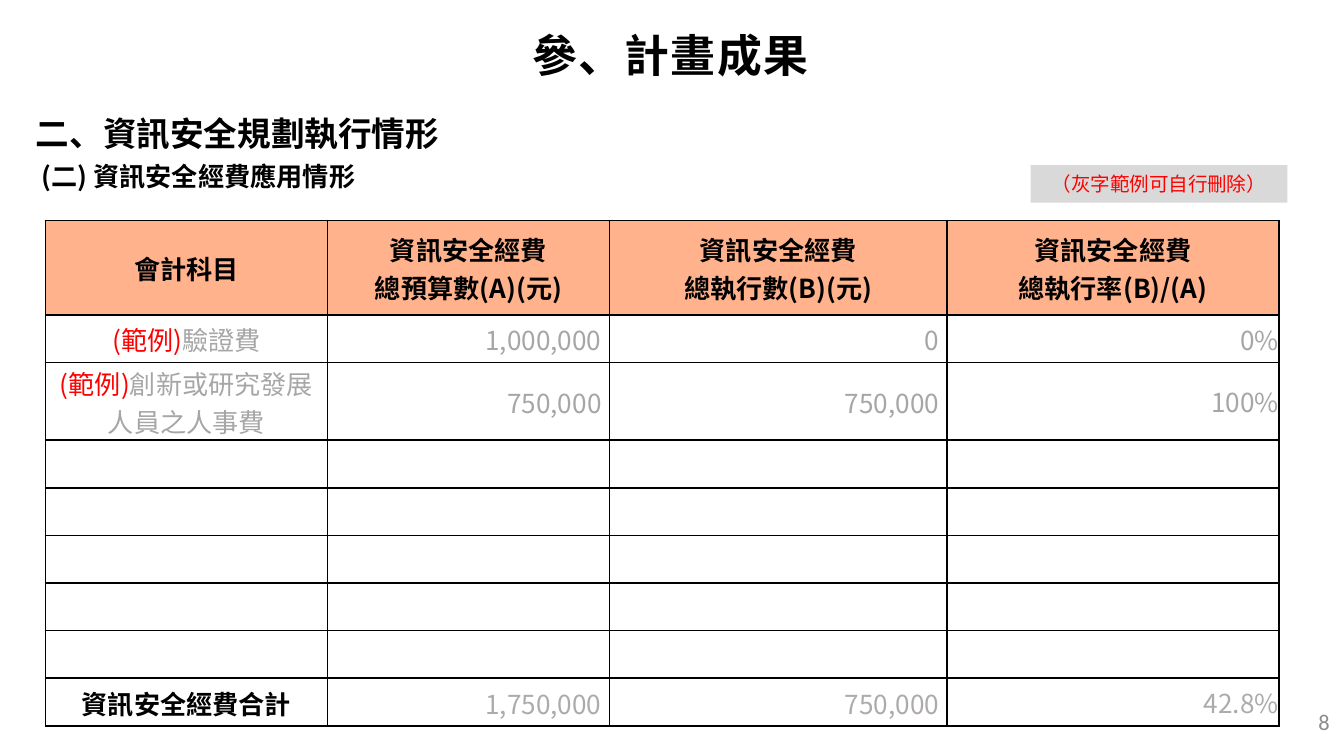
"""Build the slide reporting how the information security budget was used."""
from dataclasses import dataclass
from typing import Optional

from lxml.etree import SubElement
from pptx import Presentation
from pptx.dml.color import RGBColor
from pptx.enum.shapes import MSO_SHAPE as Shape
from pptx.enum.text import MSO_ANCHOR as Anchor, MSO_AUTO_SIZE as AutoSize, PP_ALIGN as Align
from pptx.oxml.ns import qn
from pptx.util import Cm, Pt

COLORS = {
    "black": "000000",
    "red": "FF0000",
    "sample": "A6A6A6",
    "total": "AEAAAA",
    "page": "8C8C8C",
    "header": "FFB28B",
    "note": "D9D9D9",
    "white": "FFFFFF",
}
CJK = "Noto Sans CJK SC"
EXAMPLE = "(範例)"
COLUMN_WIDTHS = [5.33, 5.33, 6.38, 6.27]
HEADERS = [
    "會計科目",
    "資訊安全經費\n總預算數(A)(元)",
    "資訊安全經費\n總執行數(B)(元)",
    "資訊安全經費\n總執行率(B)/(A)",
]
EMPTY_ROWS = 5


@dataclass
class Style:
    size: float = 14
    color: str = "black"
    bold: bool = False
    align: Align = Align.LEFT
    font: str = CJK
    spacing: float = 0


@dataclass
class Label:
    text: str
    left: float
    top: float
    width: float
    height: float
    style: Style
    anchor: Anchor = Anchor.MIDDLE
    fill: Optional[str] = None


@dataclass
class Row:
    item: str = ""
    values: tuple = ("", "", "")
    height: float = 0.9
    color: str = "sample"
    total: bool = False


TITLE = Label("(二) 資訊安全經費應用情形", 0.53, 3.07, 18.77, 0.53, Style(bold=True))
LABELS = [
    Label("參、計畫成果", -0.03, -0.05, 25.4, 2.16,
          Style(24, bold=True, align=Align.CENTER, spacing=0.8)),
    Label("8", 19.66, 13.26, 5.72, 0.76,
          Style(12, "page", align=Align.RIGHT, font="Calibri")),
    Label("二、資訊安全規劃執行情形", 0.43, 2.01, 23.29, 1.02,
          Style(18, bold=True), Anchor.TOP),
    Label("（灰字範例可自行刪除）", 19.48, 3.12, 4.85, 0.71,
          Style(10.5, "red", align=Align.CENTER), fill="note"),
]
ROWS = [
    Row("驗證費", ("1,000,000", "0", "0%")),
    Row("創新或研究發展人員之人事費", ("750,000", "750,000", "100%"), 1.32),
    *[Row() for _ in range(EMPTY_ROWS)],
    Row("資訊安全經費合計", ("1,750,000", "750,000", "42.8%"), color="total", total=True),
]


def rgb(name: str) -> RGBColor:
    return RGBColor.from_string(COLORS[name])


def format_span(span, style: Style) -> None:
    font = span.font
    font.size, font.bold, font.name = Pt(style.size), style.bold, style.font
    font.color.rgb = rgb(style.color)
    properties = span._r.get_or_add_rPr()
    SubElement(properties, qn("a:ea")).set("typeface", style.font)
    if style.spacing:
        properties.set("spc", str(round(style.spacing * 100)))


def write(frame, text: str, style: Style) -> None:
    frame.text = text
    for para in frame.paragraphs:
        para.alignment = style.align
        for span in para.runs:
            format_span(span, style)


def fill_box(box, label: Label) -> None:
    box.left, box.top = Cm(label.left), Cm(label.top)
    box.width, box.height = Cm(label.width), Cm(label.height)
    frame = box.text_frame
    frame.word_wrap, frame.auto_size = True, AutoSize.NONE
    frame.vertical_anchor = label.anchor
    write(frame, label.text, label.style)


def add_label(page, label: Label) -> None:
    place = Cm(label.left), Cm(label.top), Cm(label.width), Cm(label.height)
    if label.fill:
        box = page.shapes.add_shape(Shape.RECTANGLE, *place)
        box.shadow.inherit = False
        box.fill.solid()
        box.fill.fore_color.rgb = rgb(label.fill)
        box.line.fill.background()
    else:
        box = page.shapes.add_textbox(*place)
    fill_box(box, label)


def format_cell(cell, fill: str, side_margin: float) -> None:
    cell.vertical_anchor = Anchor.MIDDLE
    cell.margin_left = cell.margin_right = Cm(side_margin)
    cell.margin_top = Cm(0.03 if side_margin else 0)
    cell.margin_bottom = 0
    properties = cell._tc.get_or_add_tcPr()
    for side in ("lnL", "lnR", "lnT", "lnB"):
        border = SubElement(properties, qn(f"a:{side}"), w=str(Pt(1)))
        paint = SubElement(border, qn("a:solidFill"))
        SubElement(paint, qn("a:srgbClr"), val=COLORS["black"])
    cell.fill.solid()
    cell.fill.fore_color.rgb = rgb(fill)


def write_item(frame, row: Row) -> None:
    if row.total:
        write(frame, row.item, Style(bold=True, align=Align.CENTER))
        return
    write(frame, EXAMPLE, Style(color="red", align=Align.CENTER))
    span = frame.paragraphs[0].add_run()
    span.text = row.item
    format_span(span, Style(color=row.color))


def add_budget_table(page) -> None:
    heights = [1.78] + [row.height for row in ROWS]
    table = page.shapes.add_table(
        len(heights), len(COLUMN_WIDTHS), Cm(0.86), Cm(4.17),
        Cm(sum(COLUMN_WIDTHS)), Cm(sum(heights))).table
    table.horz_banding = False
    for column, width in zip(table.columns, COLUMN_WIDTHS):
        column.width = Cm(width)
    for index, height in enumerate(heights):
        table.rows[index].height = Cm(height)
        for position, cell in enumerate(table.rows[index].cells):
            is_last = position == len(COLUMN_WIDTHS) - 1
            format_cell(cell, "white" if index else "header", 0 if is_last else 0.15)
    for position, text in enumerate(HEADERS):
        write(table.cell(0, position).text_frame, text, Style(bold=True, align=Align.CENTER))
    for index, row in enumerate(ROWS, 1):
        if not row.item:
            continue
        write_item(table.cell(index, 0).text_frame, row)
        for position, value in enumerate(row.values, 1):
            write(table.cell(index, position).text_frame, value,
                  Style(color=row.color, align=Align.RIGHT))


def main() -> None:
    deck = Presentation()
    deck.slide_width, deck.slide_height = Cm(25.4), Cm(14.29)
    page = deck.slides.add_slide(deck.slide_layouts[5])
    fill_box(page.shapes.title, TITLE)
    add_budget_table(page)
    for label in LABELS:
        add_label(page, label)
    deck.save("out.pptx")


if __name__ == "__main__":
    main()
